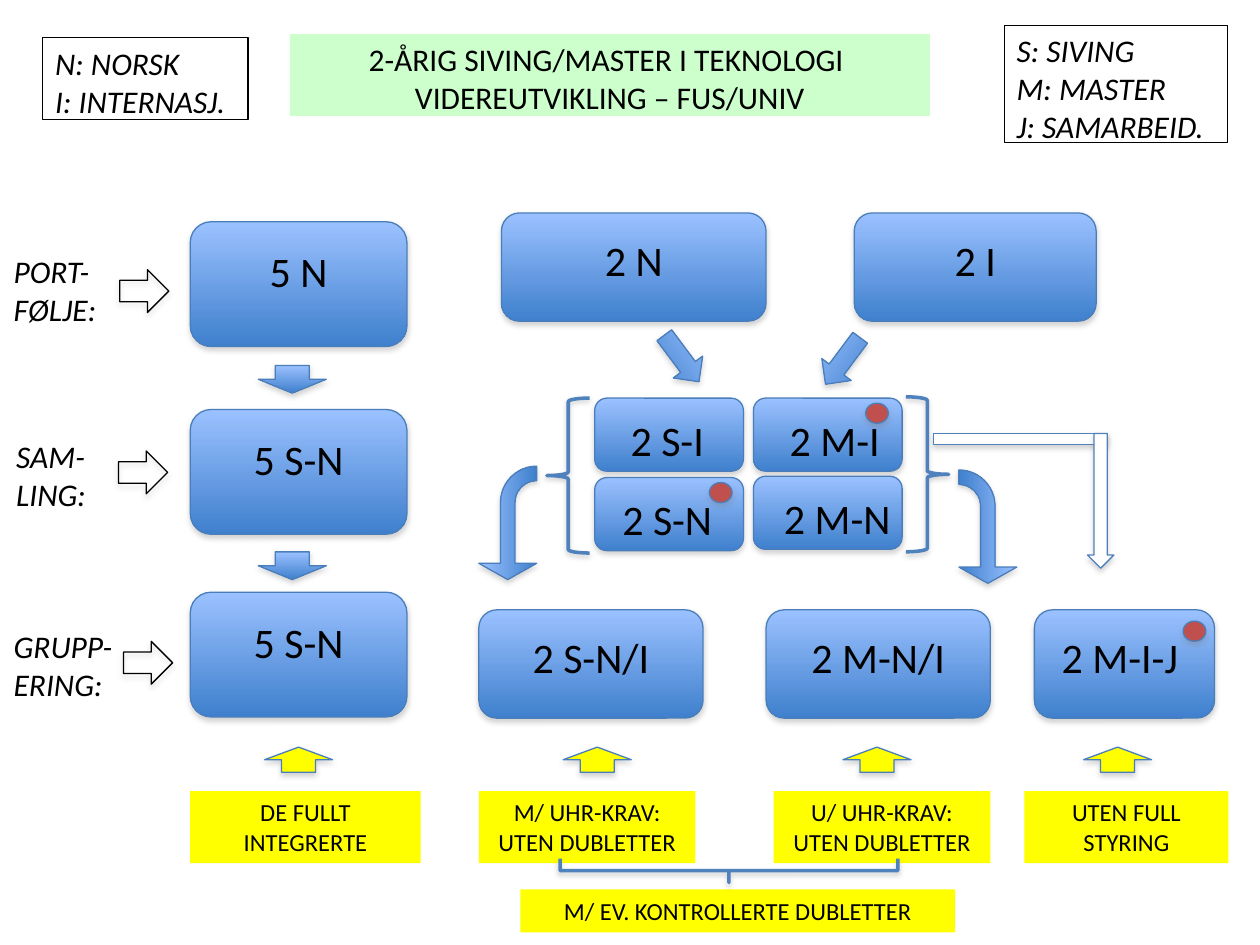
import pptx
import pptx.dml.color
import pptx.enum.shapes
import pptx.enum.text
import pptx.oxml
import pptx.oxml.ns
import pptx.util

Inches = pptx.util.Inches
Pt = pptx.util.Pt
RGBColor = pptx.dml.color.RGBColor
SHAPE = pptx.enum.shapes.MSO_SHAPE
ALIGN = pptx.enum.text.PP_ALIGN

BLACK = RGBColor(0x00, 0x00, 0x00)
WHITE = RGBColor(0xFF, 0xFF, 0xFF)
MINT = RGBColor(0xCC, 0xFF, 0xCC)
YELLOW = RGBColor(0xFF, 0xFF, 0x00)
RED = RGBColor(0xC0, 0x50, 0x4D)
OUTLINE = RGBColor(0x4A, 0x7E, 0xBB)
ACCENT = RGBColor(0x4F, 0x81, 0xBD)
SHADOW = RGBColor(0x80, 0x80, 0x80)
BLUE_GRADIENT = (RGBColor(0x9B, 0xC1, 0xFF), RGBColor(0x3F, 0x80, 0xCD))


def write_text(frame, paragraphs, size, align=ALIGN.LEFT, italic=False):
    frame.word_wrap = True
    frame.auto_size = pptx.enum.text.MSO_AUTO_SIZE.NONE
    frame.vertical_anchor = pptx.enum.text.MSO_ANCHOR.TOP
    for index, lines in enumerate(paragraphs):
        paragraph = frame.add_paragraph() if index else frame.paragraphs[0]
        paragraph.alignment = align
        for number, line in enumerate(lines):
            if number:
                paragraph.add_line_break()
            run = paragraph.add_run()
            run.text = line
            run.font.name = "Calibri"
            run.font.size = Pt(size)
            run.font.italic = italic
            run.font.color.rgb = BLACK


def set_fill(shape, fill):
    if fill is None:
        shape.fill.background()
    elif fill is BLUE_GRADIENT:
        shape.fill.gradient()
        shape.fill.gradient_angle = 270
        for stop, color, position in zip(shape.fill.gradient_stops, fill, (0, 1)):
            stop.color.rgb = color
            stop.position = position
    else:
        shape.fill.solid()
        shape.fill.fore_color.rgb = fill


def cast_shadow(shape, distance=1.8, opacity=35):
    namespace = pptx.oxml.ns.nsdecls("a")
    effects = shape.element.spPr.find(pptx.oxml.ns.qn("a:effectLst"))
    effects.append(pptx.oxml.parse_xml(
        f'<a:outerShdw {namespace} blurRad="{Pt(3.1)}" dist="{Pt(distance)}" '
        f'dir="5400000" rotWithShape="0"><a:srgbClr val="{SHADOW}">'
        f'<a:alpha val="{opacity * 1000}"/></a:srgbClr></a:outerShdw>'))


def add_plain(shapes, kind, box, fill=None, line=None, width=0.75):
    shape = shapes.add_shape(kind, *map(Inches, box))
    shape.shadow.inherit = False
    set_fill(shape, fill)
    if line is None:
        shape.line.fill.background()
    else:
        shape.line.color.rgb = line
        shape.line.width = Pt(width)
    return shape


def add_raised(shapes, kind, box, fill, line=OUTLINE, rotation=0, flip=None):
    shape = add_plain(shapes, kind, box, fill, line)
    cast_shadow(shape)
    shape.rotation = rotation
    if flip:
        shape.element.spPr.xfrm.set(flip, "1")
    return shape


def add_node(slide, label, box, label_box):
    group = slide.shapes.add_group_shape()
    add_raised(group.shapes, SHAPE.ROUNDED_RECTANGLE, box, BLUE_GRADIENT)
    caption = group.shapes.add_textbox(*map(Inches, label_box))
    write_text(caption.text_frame, [[label]], 24, ALIGN.CENTER)


def add_note(slide, text, box):
    note = add_plain(slide.shapes, SHAPE.RECTANGLE, box, YELLOW)
    write_text(note.text_frame, [[text]], 14, ALIGN.CENTER)


def add_legend(slide, paragraphs, box):
    legend = add_plain(slide.shapes, SHAPE.RECTANGLE, box, line=BLACK)
    write_text(legend.text_frame, paragraphs, 18, italic=True)


def add_stage(slide, lines, left, top, width, arrow_left, arrow_top):
    stage = slide.shapes.add_textbox(*map(Inches, (left, top, width, 0.65)))
    write_text(stage.text_frame, [lines], 18, italic=True)
    add_raised(slide.shapes, SHAPE.RIGHT_ARROW, (arrow_left, arrow_top, 0.39, 0.34), None, BLACK)


def add_brace(slide, kind, box, bend, rotation=0, flip=None):
    brace = add_plain(slide.shapes, kind, box, line=ACCENT, width=2)
    brace.adjustments[0] = bend
    brace.rotation = rotation
    cast_shadow(brace, 1.6, 38)
    if flip:
        brace.element.spPr.xfrm.set(flip, "1")


def add_bent_arrow(slide, box, flip=None):
    arrow = add_raised(slide.shapes, SHAPE.BENT_ARROW, box, BLUE_GRADIENT, rotation=90, flip=flip)
    for index, value in enumerate((0.25, 0.5, 0.28, 0.63)):
        arrow.adjustments[index] = value


def add_title(slide):
    title = slide.shapes.title
    title.left, title.top, title.width, title.height = map(Inches, (2.3, 0.27, 5.08, 0.65))
    set_fill(title, MINT)
    lines = ["2-ÅRIG SIVING/MASTER I TEKNOLOGI ", "VIDEREUTVIKLING – FUS/UNIV"]
    write_text(title.text_frame, [lines], 18, ALIGN.CENTER)


def add_nodes(slide):
    for label, left, top, width, height, inset, drop in (
        ("2 N", 3.98, 1.69, 2.1, 0.86, 0.16, 0.12),
        ("5 N", 1.51, 1.76, 1.72, 0.99, 0.13, 0.14),
        ("2 I", 6.78, 1.69, 1.92, 0.86, 0.15, 0.12),
        ("5 S-N", 1.51, 3.25, 1.72, 0.99, 0.13, 0.14),
        ("5 S-N", 1.51, 4.7, 1.72, 0.99, 0.13, 0.14),
        ("2 S-N/I", 3.8, 4.84, 1.78, 0.86, 0.14, 0.12),
        ("2 M-N/I", 6.08, 4.84, 1.78, 0.86, 0.14, 0.12),
        ("2 M-I-J ", 8.21, 4.84, 1.43, 0.86, 0.11, 0.12),
    ):
        label_box = (left + inset, top + drop, width - 2 * inset, height - 2 * drop)
        add_node(slide, label, (left, top, width, height), label_box)
    for label, left, top, label_width in (
        ("2 S-I", 4.72, 3.16, 0.99),
        ("2 M-I", 5.98, 3.16, 1.13),
        ("2 M-N", 5.98, 3.78, 1.17),
        ("2 S-N", 4.72, 3.79, 0.99),
    ):
        add_node(slide, label, (left, top, 1.18, 0.58), (left + 0.08, top + 0.08, label_width, 0.46))


def add_flow(slide):
    shapes = slide.shapes
    for left in (2.1, 4.47, 6.69, 8.6):
        add_raised(shapes, SHAPE.UP_ARROW, (left, 5.93, 0.54, 0.2), YELLOW)
    for top in (2.9, 4.38):
        add_raised(shapes, SHAPE.DOWN_ARROW, (2.05, top, 0.54, 0.22), BLUE_GRADIENT)
    add_raised(shapes, SHAPE.RIGHT_ARROW, (5.18, 2.7, 0.46, 0.29), BLUE_GRADIENT, rotation=53.3)
    add_raised(shapes, SHAPE.RIGHT_ARROW, (6.46, 2.72, 0.46, 0.29), BLUE_GRADIENT,
               rotation=306.7, flip="flipH")
    add_brace(slide, SHAPE.LEFT_BRACE, (4.34, 3.16, 0.34, 1.23), 0.083)
    add_brace(slide, SHAPE.LEFT_BRACE, (7.19, 3.15, 0.34, 1.23), 0.083, flip="flipH")
    add_bent_arrow(slide, (3.58, 3.92, 0.9, 0.46), "flipV")
    add_bent_arrow(slide, (7.39, 3.95, 0.9, 0.46))
    add_raised(shapes, SHAPE.RECTANGLE, (7.41, 3.44, 1.38, 0.09), WHITE, ACCENT)
    add_raised(shapes, SHAPE.RIGHT_ARROW, (8.2, 3.87, 1.07, 0.21), WHITE, ACCENT, rotation=90)


def main():
    deck = pptx.Presentation()
    deck.slide_width, deck.slide_height = Inches(10), Inches(7.5)
    slide = deck.slides.add_slide(deck.slide_layouts[5])
    add_title(slide)
    add_nodes(slide)
    add_legend(slide, [["N: NORSK", "I: INTERNASJ."]], (0.34, 0.3, 1.63, 0.65))
    add_legend(slide, [["S: SIVING", "M: MASTER"], ["J: SAMARBEID."]], (7.97, 0.2, 1.77, 0.93))
    add_stage(slide, ["PORT-", "FØLJE:"], 0.01, 1.95, 0.92, 0.95, 2.14)
    add_stage(slide, ["SAM-", "LING:"], 0.03, 3.42, 0.82, 0.94, 3.58)
    add_stage(slide, ["GRUPP-", "ERING:"], 0.01, 4.93, 1.06, 0.98, 5.09)
    for text, left, width in (
        ("DE FULLT INTEGRERTE", 1.51, 1.83),
        ("M/ UHR-KRAV: UTEN DUBLETTER", 3.8, 1.72),
        ("U/ UHR-KRAV: UTEN DUBLETTER", 6.14, 1.72),
        ("UTEN FULL STYRING", 8.13, 1.62),
    ):
        add_note(slide, text, (left, 6.28, width, 0.57))
    add_flow(slide)
    add_note(slide, "M/ EV. KONTROLLERTE DUBLETTER", (4.13, 7.06, 3.45, 0.34))
    add_brace(slide, SHAPE.RIGHT_BRACE, (5.69, 5.57, 0.19, 2.68), 0, rotation=90)
    for left, top in ((6.87, 3.2), (5.63, 3.83), (9.39, 4.93)):
        add_raised(slide.shapes, SHAPE.OVAL, (left, top, 0.18, 0.16), RED)
    deck.save("out.pptx")


if __name__ == "__main__":
    main()
